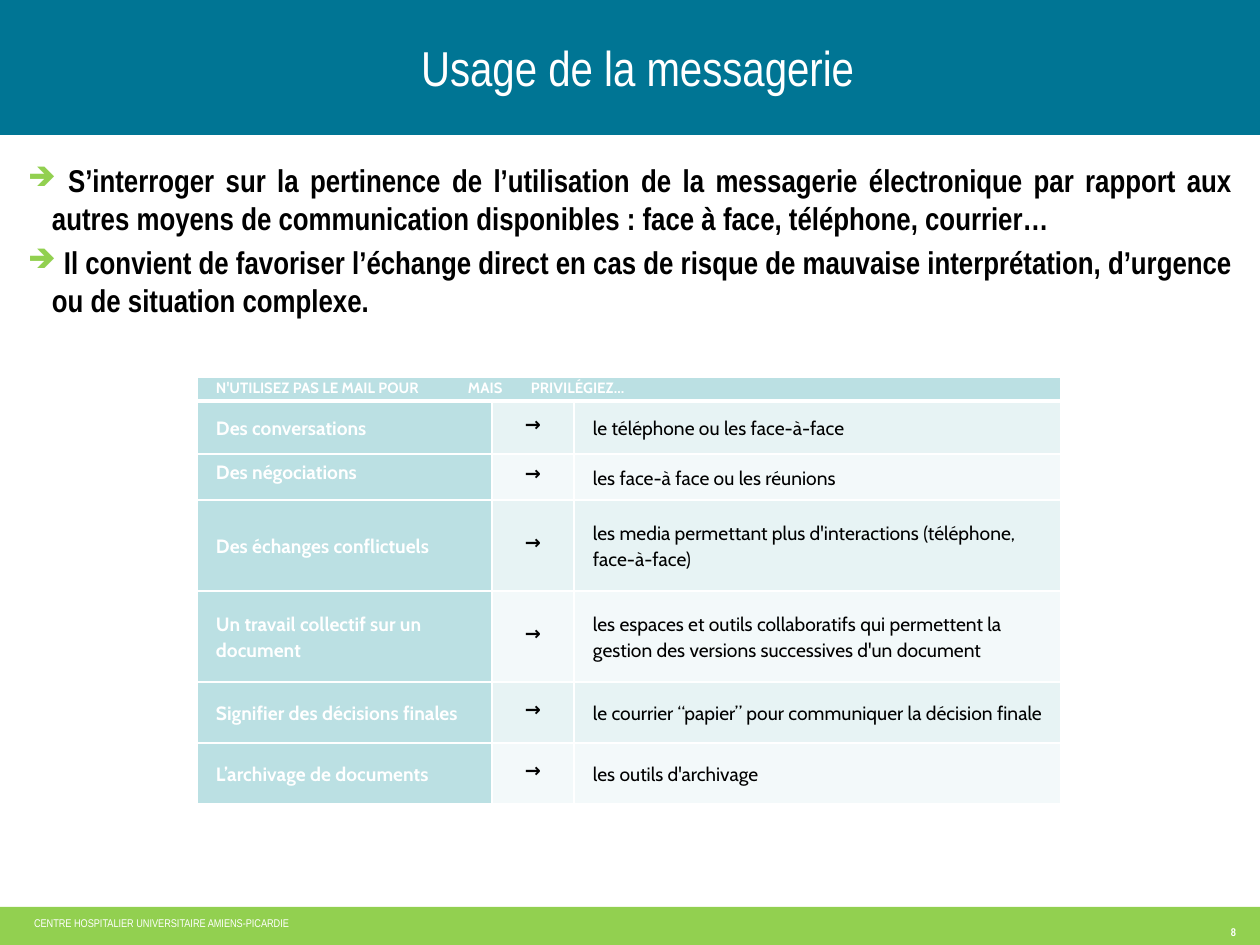
from dataclasses import dataclass

from lxml import etree
from pptx import Presentation
from pptx import util as u
from pptx.dml.color import RGBColor
from pptx.enum import shapes, text
from pptx.oxml.ns import qn

PX = 914400 / 126  # EMU in one px


@dataclass(frozen=True)
class Theme:
    font: str = "Arial Narrow"
    table_font: str = "Cabin"
    white: str = "FFFFFF"
    black: str = "000000"
    blue: str = "007594"
    green: str = "92D050"
    head: str = "BBE0E3"
    bands: tuple = ("E7F3F4", "F3F9FA")
    title: float = 28
    body: float = 18
    cell: float = 11
    header: float = 8.5
    footer: float = 11


T = Theme()
TITLE = "Usage de la messagerie"
FOOTER = "CENTRE HOSPITALIER UNIVERSITAIRE AMIENS-PICARDIE"
ADVICE = [
    " S’interroger sur la pertinence de l’utilisation de la messagerie électronique par rapport "
    "aux autres moyens de communication disponibles : face à face, téléphone, courrier…",
    " Il convient de favoriser l’échange direct en cas de risque de mauvaise interprétation, "
    "d’urgence ou de situation complexe.",
]
HEADER = "N'UTILISEZ PAS LE MAIL POUR\tMAIS\tPRIVILÉGIEZ…"
ROWS = [
    ("Des conversations", "le téléphone ou les face-à-face"),
    ("Des négociations", "les face-à face ou les réunions"),
    ("Des échanges conflictuels",
     "les media permettant plus d'interactions (téléphone, face-à-face)"),
    ("Un travail collectif sur un document",
     "les espaces et outils collaboratifs qui permettent la gestion des versions successives "
     "d'un document"),
    ("Signifier des décisions finales", "le courrier “papier” pour communiquer la décision finale"),
    ("L’archivage de documents", "les outils d'archivage"),
]
COL_WIDTHS = (295, 82, 487)
ROW_HEIGHTS = (24, 53, 46, 91, 91, 61, 61)


def px(n):
    return u.Emu(round(n * PX))


def set_all(obj, values):
    for name, value in values.items():
        setattr(obj, name, value)


def add_xml(parent, tag, **attrs):
    return etree.SubElement(parent, qn(tag), {k: str(v) for k, v in attrs.items()})


def set_indent(p, left, first=0):
    pPr = p._p.get_or_add_pPr()
    pPr.set("marL", str(px(left)))
    pPr.set("indent", str(px(first)))
    return pPr


def add_run(p, words, size, color, font=T.font, bold=False):
    r = p.add_run()
    r.text = words
    set_all(r.font, {"name": font, "size": u.Pt(size), "bold": bold})
    r.font.color.rgb = RGBColor.from_string(color)
    return r


def add_band(s, top, height, color):
    sp = s.shapes.add_shape(shapes.MSO_SHAPE.RECTANGLE, 0, px(top), px(1260), px(height))
    sp.shadow.inherit = False
    sp.fill.solid()
    sp.fill.fore_color.rgb = RGBColor.from_string(color)
    sp.line.fill.background()


def add_box(s, box, insets, anchor=text.MSO_ANCHOR.TOP):
    tf = s.shapes.add_textbox(*map(px, box)).text_frame
    sides = ("margin_left", "margin_top", "margin_right", "margin_bottom")
    set_all(tf, dict(zip(sides, map(px, insets))))
    set_all(tf, {"word_wrap": True, "vertical_anchor": anchor})
    return tf


def add_footer(s, box, words, align, bold=False):
    p = add_box(s, box, (49, 6, 10, 10)).paragraphs[0]
    p.alignment = align
    r = add_run(p, words, T.footer, T.white, bold=bold)
    r.font._element.set("baseline", "30000")


def add_bullets(s, box, items):
    tf = add_box(s, box, (13, 6, 13, 6))
    for i, words in enumerate(items):
        p = tf.paragraphs[0] if i == 0 else tf.add_paragraph()
        p.alignment = text.PP_ALIGN.JUSTIFY
        if i:
            p.space_before = u.Pt(T.body * 0.2)
        pPr = set_indent(p, 24, -24)
        add_xml(add_xml(pPr, "a:buClr"), "a:srgbClr", val=T.green)
        add_xml(pPr, "a:buSzPct", val=85000)
        add_xml(pPr, "a:buChar", char="➔")
        add_run(p, words, T.body, T.black, bold=True)


def style_cell(cell, fill, bottom=1):
    set_all(cell, {"margin_left": px(9), "margin_right": px(9), "margin_top": 0,
                   "margin_bottom": 0, "vertical_anchor": text.MSO_ANCHOR.MIDDLE})
    tcPr = cell._tc.get_or_add_tcPr()
    for side, width in (("L", 1), ("R", 1), ("T", 1), ("B", bottom)):
        ln = add_xml(tcPr, f"a:ln{side}", w=u.Pt(width))
        add_xml(add_xml(ln, "a:solidFill"), "a:srgbClr", val=T.white)
    cell.fill.solid()
    cell.fill.fore_color.rgb = RGBColor.from_string(fill)


def fill_cell(cell, words, color, bold=False, size=T.cell, arrow=False, tabs=()):
    p = cell.text_frame.paragraphs[0]
    if arrow:
        set_all(p, {"alignment": text.PP_ALIGN.CENTER, "line_spacing": u.Pt(10)})
    else:
        p.line_spacing = 1.12
        pPr = set_indent(p, 10)
        if tabs:
            stops = add_xml(pPr, "a:tabLst")
            for pos in tabs:
                add_xml(stops, "a:tab", pos=px(pos), algn="l")
    add_run(p, words, size, color, T.table_font, bold)


def add_choices(s, left, top):
    frame = s.shapes.add_table(len(ROW_HEIGHTS), len(COL_WIDTHS), px(left), px(top),
                               px(sum(COL_WIDTHS)), px(sum(ROW_HEIGHTS)))
    tbl = frame.table
    for col, width in zip(tbl.columns, COL_WIDTHS):
        col.width = px(width)
    for row, height in zip(tbl.rows, ROW_HEIGHTS):
        row.height = px(height)

    # Header across all columns
    for cell in tbl.rows[0].cells:
        style_cell(cell, T.head, bottom=3)
    head = tbl.cell(0, 0)
    head.merge(tbl.cell(0, 2))
    head.vertical_anchor = text.MSO_ANCHOR.TOP
    fill_cell(head, HEADER, T.white, True, T.header, tabs=(339, 470))

    # Use to avoid, arrow, better choice
    for i, (avoid, prefer) in enumerate(ROWS):
        cells = tbl.rows[i + 1].cells
        band = T.bands[i % 2]
        for cell, fill in zip(cells, (T.head, band, band)):
            style_cell(cell, fill)
        fill_cell(cells[0], avoid, T.white, bold=True)
        fill_cell(cells[1], "→", T.black, bold=True, arrow=True)
        fill_cell(cells[2], prefer, T.black)
    # This label sits high in its row
    tbl.cell(2, 0).text_frame.paragraphs[0].line_spacing = u.Pt(8)


def main():
    prs = Presentation()
    set_all(prs, {"slide_width": px(1260), "slide_height": px(945)})
    s = prs.slides.add_slide(prs.slide_layouts[6])

    # Bands and footer
    add_band(s, 907, 38, T.green)
    add_band(s, 0, 135, T.blue)
    add_footer(s, (869, 917, 377, 32), "8", text.PP_ALIGN.RIGHT, bold=True)
    add_footer(s, (-15, 908, 714, 40), FOOTER, text.PP_ALIGN.LEFT)

    # Title
    p = add_box(s, (0, 3, 1260, 132), (64, 5, 49, 5), text.MSO_ANCHOR.MIDDLE).paragraphs[0]
    set_all(p, {"alignment": text.PP_ALIGN.CENTER, "line_spacing": u.Pt(31)})
    add_run(p, TITLE, T.title, T.white)

    # Advice and table
    add_bullets(s, (15, 155, 1231, 183), ADVICE)
    add_choices(s, 197, 377)
    prs.save("out.pptx")


if __name__ == "__main__":
    main()
